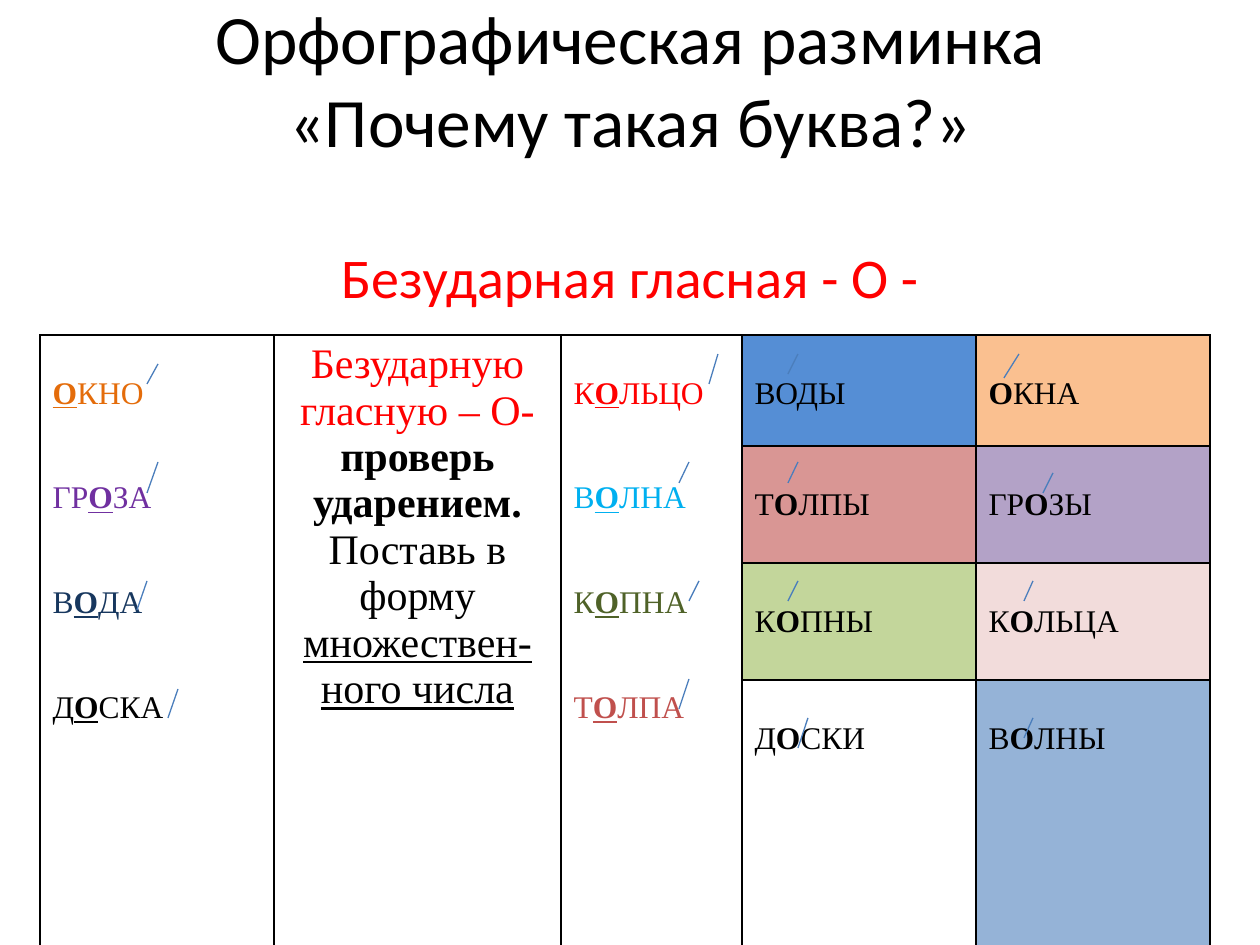
from lxml.etree import SubElement
from pptx import Presentation
from pptx.dml.color import RGBColor
from pptx.enum.shapes import MSO_CONNECTOR
from pptx.enum.text import MSO_ANCHOR, MSO_AUTO_SIZE, PP_ALIGN
from pptx.oxml.ns import qn
from pptx.util import Pt

PX = 914400 // 126
THEME = dict(
    sans="Calibri", serif="Times New Roman",
    black="000000", red="FF0000", mark="4B7EBC",
    title=39.6, sub=32, rule=24, word=18,
)


def write(par, text, font=THEME["serif"], size=THEME["word"],
          color=THEME["black"], bold=False, under=False):
    run = par.add_run()
    run.text = text
    face = run.font
    face.name, face.size = font, Pt(size)
    face.bold, face.underline = bold, under
    face.color.rgb = RGBColor.from_string(color)


def spell(par, word, color=THEME["black"], under=False):
    """Write a word whose checked vowel stands between bars."""
    for part in filter(None, word.split("|")):
        vowel = part == "О"
        write(par, part, color=color, bold=vowel, under=vowel and under)


prs = Presentation()
prs.slide_width, prs.slide_height = 1260 * PX, 945 * PX
slide = prs.slides.add_slide(prs.slide_layouts[0])

# Title and subtitle
title, sub = slide.placeholders
heads = [
    (title, (95, 39, 1071, 79), ["Орфографическая разминка", "«Почему такая буква?»"],
     THEME["title"], THEME["black"]),
    (sub, (189, 236, 882, 541), ["Безударная гласная - О -"],
     THEME["sub"], THEME["red"]),
]
for box, place, lines, size, color in heads:
    box.left, box.top, box.width, box.height = [n * PX for n in place]
    frame = box.text_frame
    frame.auto_size = MSO_AUTO_SIZE.NONE
    par = frame.paragraphs[0]
    par.alignment = PP_ALIGN.CENTER
    for i, line in enumerate(lines):
        if i:
            par.add_line_break()
        write(par, line, font=THEME["sans"], size=size, color=color)
title.text_frame.vertical_anchor = MSO_ANCHOR.MIDDLE

# Table grid
cols = [234, 287, 181, 234, 234]
rows = [111, 117, 117, 265]
table = slide.shapes.add_table(
    len(rows), len(cols), 40 * PX, 335 * PX, sum(cols) * PX, sum(rows) * PX).table
table.first_row = table.horz_banding = False
for col, width in zip(table.columns, cols):
    col.width = width * PX
for row, height in zip(table.rows, rows):
    row.height = height * PX

# Cell borders
for cell in table.iter_cells():
    props = cell._tc.get_or_add_tcPr()
    for side in ("a:lnL", "a:lnR", "a:lnT", "a:lnB"):
        edge = SubElement(props, qn(side), w=str(Pt(1)))
        fill = SubElement(edge, qn("a:solidFill"))
        SubElement(fill, qn("a:srgbClr"), val=THEME["black"])
    cell.fill.background()
for c in range(3):
    table.cell(0, c).merge(table.cell(3, c))

# Singular words, each list in one tall cell
lists = {
    0: [("|О|КНО", "E46C0A"), ("ГР|О|ЗА", "7030A0"),
        ("В|О|ДА", "17375E"), ("Д|О|СКА", "000000")],
    2: [("К|О|ЛЬЦО", "FF0000"), ("В|О|ЛНА", "00B0F0"),
        ("К|О|ПНА", "4F6228"), ("Т|О|ЛПА", "C0504D")],
}
for c, words in lists.items():
    cell = table.cell(0, c)
    cell.margin_top = 41 * PX
    frame = cell.text_frame
    for i, (word, color) in enumerate(words):
        par = frame.add_paragraph() if i else frame.paragraphs[0]
        if i:
            par.space_before = Pt(40)
        spell(par, word, color=color, under=True)

# Spelling rule
par = table.cell(0, 1).text_frame.paragraphs[0]
par.alignment = PP_ALIGN.CENTER
rule = [
    ("Безударную гласную – О- ", dict(color=THEME["red"])),
    ("проверь ударением. ", dict(bold=True)),
    ("Поставь в форму ", {}),
    ("множествен- ного числа", dict(under=True)),
]
for text, look in rule:
    write(par, text, size=THEME["rule"], **look)

# Plural words on coloured cells
plurals = [
    [("ВОДЫ", "558ED5"), ("|О|КНА", "FAC090")],
    [("Т|О|ЛПЫ", "D99694"), ("ГР|О|ЗЫ", "B3A2C7")],
    [("К|О|ПНЫ", "C3D69B"), ("К|О|ЛЬЦА", "F2DCDB")],
    [("Д|О|СКИ", None), ("В|О|ЛНЫ", "95B3D7")],
]
for r, pair in enumerate(plurals):
    for c, (word, back) in enumerate(pair, 3):
        cell = table.cell(r, c)
        cell.margin_top = 41 * PX
        spell(cell.text_frame.paragraphs[0], word)
        if back:
            cell.fill.solid()
            cell.fill.fore_color.rgb = RGBColor.from_string(back)

# Stress marks: upper right end, then lower left end
marks = [
    (158, 364, 147, 384), (158, 462, 147, 493),
    (147, 581, 137, 610), (178, 689, 168, 718),
    (718, 354, 709, 384), (689, 462, 679, 483),
    (699, 581, 689, 601), (689, 679, 679, 709),
    (798, 354, 788, 374), (808, 718, 798, 748),
    (1053, 473, 1043, 493), (1019, 354, 1004, 378),
    (1033, 581, 1024, 601), (1033, 718, 1024, 738),
    (798, 581, 788, 601), (798, 462, 788, 483),
]
for ends in marks:
    mark = slide.shapes.add_connector(
        MSO_CONNECTOR.STRAIGHT, *[n * PX for n in ends])
    mark.line.width = Pt(0.75)
    mark.line.color.rgb = RGBColor.from_string(THEME["mark"])
    SubElement(mark._element.spPr, qn("a:effectLst"))

prs.save("out.pptx")
